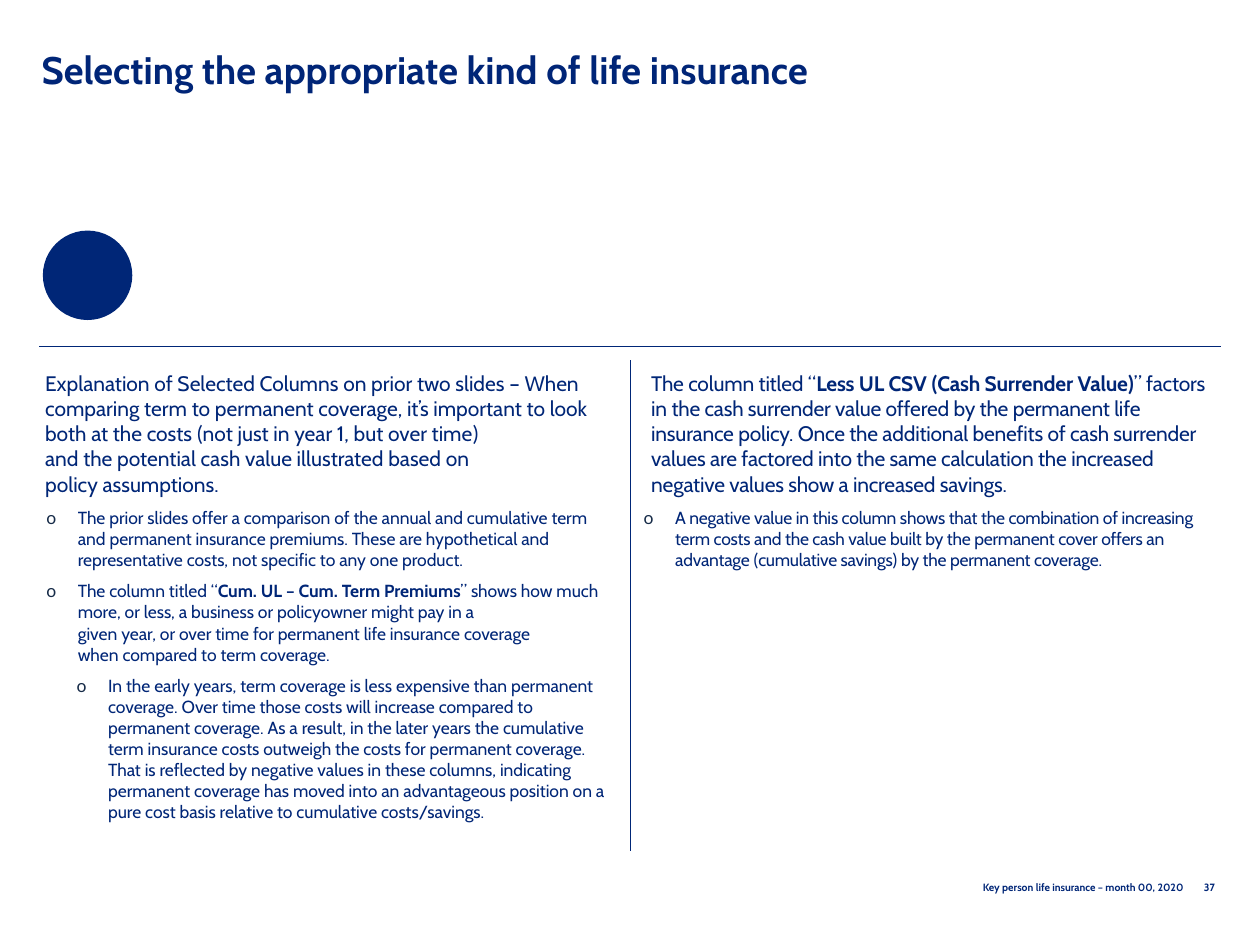
from dataclasses import dataclass
from itertools import groupby

from lxml import etree
from pptx import Presentation
from pptx.dml.color import RGBColor
from pptx.enum.shapes import MSO_CONNECTOR, MSO_SHAPE
from pptx.enum.text import MSO_ANCHOR, MSO_AUTO_SIZE, PP_ALIGN
from pptx.oxml.ns import qn
from pptx.util import Inches, Pt

STRAIGHT = MSO_CONNECTOR.STRAIGHT
OVAL = MSO_SHAPE.OVAL
TOP, MIDDLE = MSO_ANCHOR.TOP, MSO_ANCHOR.MIDDLE
LEFT, RIGHT = PP_ALIGN.LEFT, PP_ALIGN.RIGHT


@dataclass(frozen=True)
class Theme:
    navy: RGBColor = RGBColor(0x00, 0x26, 0x77)
    title_navy: RGBColor = RGBColor(0x00, 0x25, 0x77)
    bullet: str = "162B48"
    font: str = "Cabin"
    paren_font: str = "Lato"
    title: float = 21.9
    lead: float = 12
    body: float = 10
    footer: float = 6
    rule: float = 0.5
    gap: float = 6
    hanging: float = 0.25


@dataclass(frozen=True)
class Para:
    """Text with **bold** spans; newlines become line breaks."""
    text: str
    size: float
    level: int = 0
    margin: float = 0
    bulleted: bool = False


@dataclass(frozen=True)
class Column:
    left: float
    paras: tuple[Para, ...]
    spacing: float = 0


THEME = Theme()

COLUMNS = (
    Column(0.26, (
        Para("Explanation of Selected Columns on prior two slides – When comparing term to "
             "permanent coverage, it’s important to look both at the costs (not just in year 1, "
             "but over time) \nand the potential cash value illustrated based on \n"
             "policy assumptions.", THEME.lead),
        Para("The prior slides offer a comparison of the annual and cumulative term and permanent "
             "insurance premiums. These are hypothetical and representative costs, not specific "
             "to any one product.", THEME.body, 1, 0.26, True),
        Para("The column titled “**Cum. UL – Cum. Term Premiums**” shows how much more, or less, "
             "a business or policyowner might pay in a \ngiven year, or over time for permanent "
             "life insurance coverage \nwhen compared to term coverage.",
             THEME.body, 1, 0.26, True),
        Para("In the early years, term coverage is less expensive than permanent coverage. Over "
             "time those costs will increase compared to permanent coverage. As a result, in the "
             "later years the cumulative term insurance costs outweigh the costs for permanent "
             "coverage. That is reflected by negative values in these columns, indicating "
             "permanent coverage has moved into an advantageous position on a pure cost basis "
             "relative to cumulative costs/savings.", THEME.body, 2, 0.5, True),
    )),
    Column(5, (
        Para("The column titled “**Less UL CSV (Cash Surrender Value)**” factors in the cash "
             "surrender value offered by the permanent life insurance policy. Once the additional "
             "benefits of cash surrender values are factored into the same calculation the "
             "increased negative values show a increased savings.", THEME.lead, 1, 0.07),
        Para("A negative value in this column shows that the combination of increasing term costs "
             "and the cash value built by the permanent cover offers an advantage (cumulative "
             "savings) by the permanent coverage.", THEME.body, 2, 0.26, True),
    ), spacing=-0.1),
)


def write(p, text: str, *, size: float, bold=False, color=THEME.navy,
          font=THEME.font, spacing: float = 0) -> None:
    """Add one formatted run to a paragraph."""
    r = p.add_run()
    r.text = text
    r.font.name, r.font.size, r.font.bold = font, Pt(size), bold
    r.font.color.rgb = color
    if spacing:
        r.font._element.set("spc", str(round(spacing * 100)))


def write_rich(p, para: Para, spacing: float) -> None:
    """Add bold spans, line breaks and parentheses set in their own font."""
    for i, span in enumerate(para.text.split("**")):
        for j, line in enumerate(span.split("\n")):
            if j:
                p.add_line_break()
            for is_paren, chars in groupby(line, key=lambda c: c in "()"):
                write(p, "".join(chars), size=para.size, bold=i % 2 == 1, spacing=spacing,
                      font=THEME.paren_font if is_paren else THEME.font)


def indent(p, para: Para) -> None:
    p.level = para.level
    pPr = p._p.get_or_add_pPr()
    pPr.set("marL", str(Inches(para.margin)))
    pPr.set("indent", str(-Inches(THEME.hanging) if para.bulleted else 0))
    if para.bulleted:
        color = etree.SubElement(pPr, qn("a:buClr"))
        etree.SubElement(color, qn("a:srgbClr"), val=THEME.bullet)
        etree.SubElement(pPr, qn("a:buFont"), typeface=THEME.paren_font)
        etree.SubElement(pPr, qn("a:buChar"), char="o")


def add_box(s, left: float, top: float, width: float, height: float, anchor=TOP):
    tf = s.shapes.add_textbox(Inches(left), Inches(top), Inches(width), Inches(height)).text_frame
    tf.word_wrap = True
    tf.vertical_anchor = anchor
    return tf


def add_title(s, text: str) -> None:
    sp = s.shapes.title
    sp.left, sp.top, sp.width, sp.height = Inches(0.23), Inches(0.42), Inches(9.45), Inches(0.82)
    tf = sp.text_frame
    tf.auto_size = MSO_AUTO_SIZE.NONE
    tf.vertical_anchor = TOP
    p = tf.paragraphs[0]
    p.alignment = LEFT
    p.line_spacing = Pt(18.8)
    write(p, text, size=THEME.title, bold=True, color=THEME.title_navy)


def add_column(s, column: Column) -> None:
    tf = add_box(s, column.left, 2.89, 4.69, 3.86)
    for i, para in enumerate(column.paras):
        p = tf.add_paragraph() if i else tf.paragraphs[0]
        if i:
            p.space_before = Pt(THEME.gap)
        indent(p, para)
        write_rich(p, para, column.spacing)


def add_rule(s, x1: float, y1: float, x2: float, y2: float) -> None:
    line = s.shapes.add_connector(STRAIGHT, Inches(x1), Inches(y1), Inches(x2), Inches(y2))
    line.line.color.rgb = THEME.navy
    line.line.width = Pt(THEME.rule)
    etree.SubElement(line._element.spPr, qn("a:effectLst"))


def add_footer(s, text: str, left: float, width: float, height: float, anchor=TOP) -> None:
    p = add_box(s, left, 6.94, width, height, anchor).paragraphs[0]
    p.alignment = RIGHT
    write(p, text, size=THEME.footer, bold=True)


def main() -> None:
    prs = Presentation()
    prs.slide_width, prs.slide_height = Inches(10), Inches(7.5)
    s = prs.slides.add_slide(prs.slide_layouts[5])

    add_title(s, "Selecting the appropriate kind of life insurance")

    # Round marker above the columns
    dot = s.shapes.add_shape(OVAL, Inches(0.34), Inches(1.83), Inches(0.71), Inches(0.71))
    dot.shadow.inherit = False
    dot.fill.solid()
    dot.fill.fore_color.rgb = THEME.navy
    dot.line.fill.background()

    # Two text columns and their rules
    for column in COLUMNS:
        add_column(s, column)
    add_rule(s, 0.31, 2.75, 9.69, 2.75)
    add_rule(s, 5, 2.86, 5, 6.75)

    # Footer
    add_footer(s, "Key person life insurance – month 00, 2020", 6.11, 3.38, 0.2, MIDDLE)
    add_footer(s, "37", 9.4, 0.34, 0.15)

    prs.save("out.pptx")


if __name__ == "__main__":
    main()
